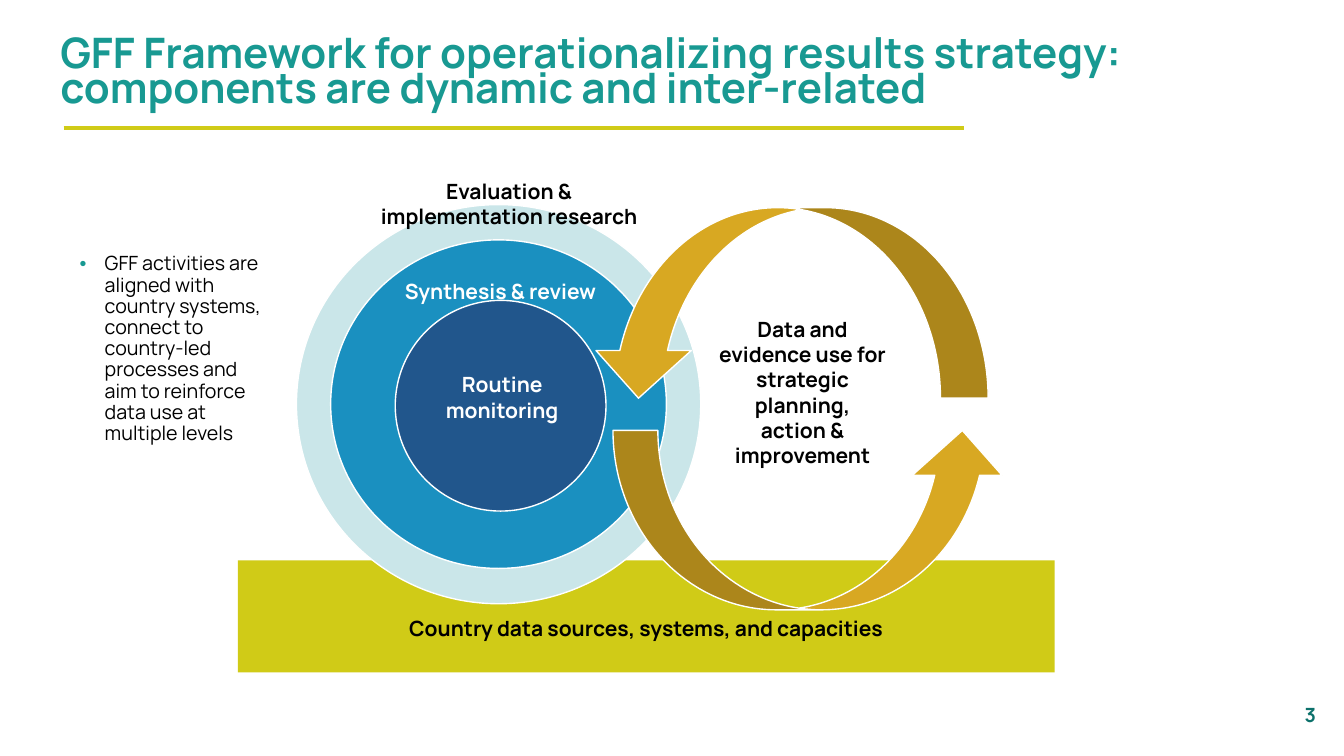
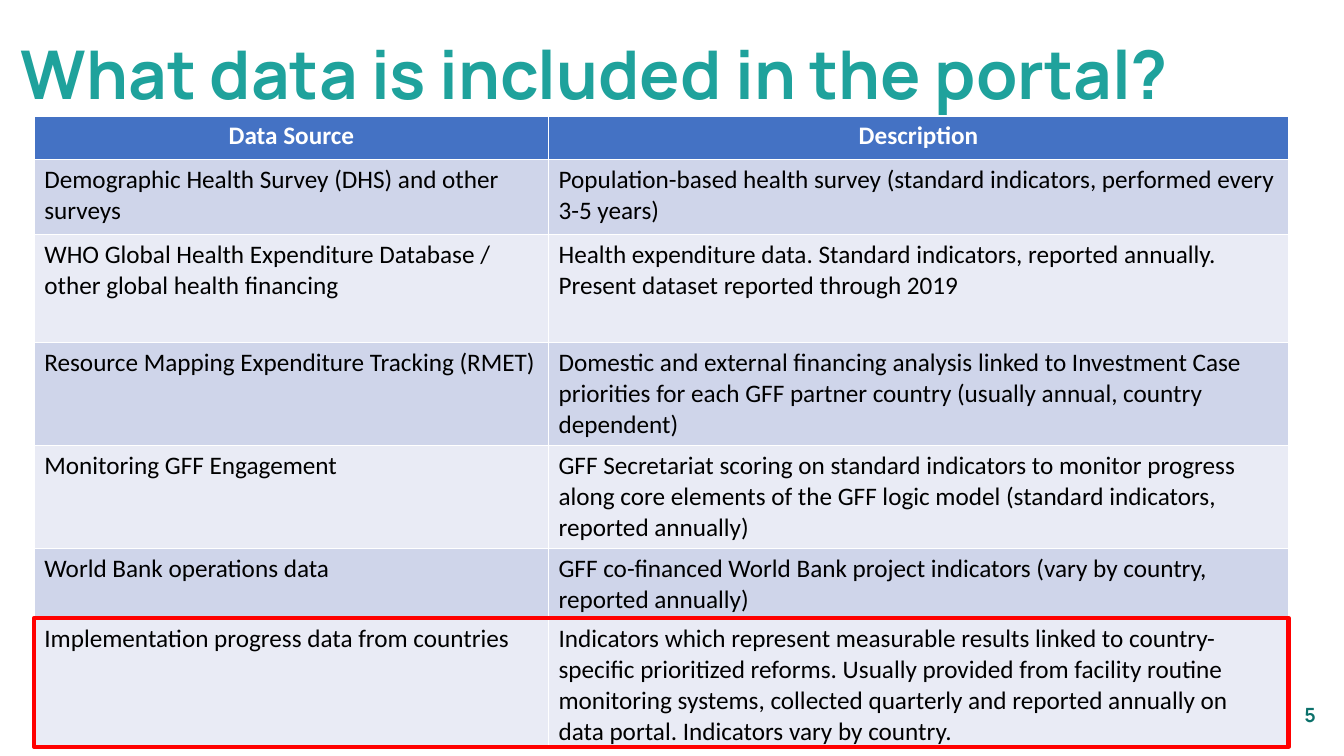
from lxml import etree
from pptx import Presentation
from pptx.dml.color import RGBColor
from pptx.enum.shapes import MSO_CONNECTOR, MSO_SHAPE
from pptx.enum.text import MSO_ANCHOR, PP_ALIGN
from pptx.oxml.ns import qn
from pptx.util import Inches, Pt

LEFT, MID, RIGHT = PP_ALIGN.LEFT, PP_ALIGN.CENTER, PP_ALIGN.RIGHT
TOP, CENTRE = MSO_ANCHOR.TOP, MSO_ANCHOR.MIDDLE
RECT, OVAL, ARROW = MSO_SHAPE.RECTANGLE, MSO_SHAPE.OVAL, MSO_SHAPE.CURVED_UP_ARROW

FONT, GRID_FONT = "Manrope", "Calibri"
COLORS = {
    "teal": "189992", "aqua": "1FA29C", "pine": "0C716B", "lime": "D0CB17",
    "pale": "CAE6E9", "blue": "1A90C0", "navy": "21568C", "gold": "D8A822",
    "head": "4472C4", "odd": "CFD5EA", "even": "E9EBF5",
    "red": "FF0000", "black": "000000", "white": "FFFFFF",
}

# Content: framework slide
FRAME_TITLE = ("GFF Framework for operationalizing results strategy: "
               "components are dynamic and inter-related")
NOTE = ("GFF activities are aligned with country systems, connect to "
        "country-led processes and aim to reinforce data use at multiple levels")
BASE = "Country data sources, systems, and capacities"
RINGS = [  # box, fill
    ((2.94, 2.03, 4.01, 3.96), "pale"),
    ((3.28, 2.38, 3.33, 3.26), "blue"),
    ((3.92, 2.98, 2.09, 2.09), "navy"),
]
LABELS = [  # box, lines, colour
    ((2.85, 1.72, 4.4, 0.61), ["Evaluation &", "implementation research"], "black"),
    ((3.71, 2.71, 2.51, 0.35), ["Synthesis & review"], "white"),
    ((3.99, 3.64, 1.98, 0.61), ["Routine monitoring"], "white"),
]
ARROWS = [  # box, rotation
    ((5.86, 2.06, 3.94, 1.89), 180),
    ((6.08, 4.27, 3.91, 1.78), 0),
]
USE = ["Data and", "evidence use for strategic planning,", "action & improvement"]

# Content: data slide
DATA_TITLE = "What data is included in the portal?"
WIDTHS = [5.1, 7.34]
HEIGHTS = [0.43, 0.75, 1.07, 1.02, 1.02, 0.7, 1.26]
ROWS = [
    ("Data Source", "Description"),
    ("Demographic Health Survey (DHS) and other surveys",
     "Population-based health survey (standard indicators, performed every 3-5 years)"),
    ("WHO Global Health Expenditure Database / other global health financing",
     "Health expenditure data. Standard indicators, reported annually. "
     "Present dataset reported through 2019"),
    ("Resource Mapping Expenditure Tracking (RMET)",
     "Domestic and external financing analysis linked to Investment Case priorities "
     "for each GFF partner country (usually annual, country dependent)"),
    ("Monitoring GFF Engagement",
     "GFF Secretariat scoring on standard indicators to monitor progress along core "
     "elements of the GFF logic model (standard indicators, reported annually)"),
    ("World Bank operations data",
     "GFF co-financed World Bank project indicators (vary by country, reported annually)"),
    ("Implementation progress data from countries",
     "Indicators which represent measurable results linked to country-specific "
     "prioritized reforms. Usually provided from facility routine monitoring systems, "
     "collected quarterly and reported annually on data portal. "
     "Indicators vary by country."),
]


def rgb(name):
    return RGBColor.from_string(COLORS[name])


def inches(box):
    return [Inches(n) for n in box]


def style(para, size, color, bold, align, font=FONT, space=1.0):
    para.alignment = align
    para.line_spacing = space
    for run in para.runs:
        run.font.name, run.font.size, run.font.bold = font, Pt(size), bold
        run.font.color.rgb = rgb(color)


def fill_text(frame, lines, size, color, bold=True, align=MID, anchor=TOP, space=1.0):
    frame.word_wrap = True
    frame.vertical_anchor = anchor
    frame.text = "\n".join(lines)
    for para in frame.paragraphs:
        style(para, size, color, bold, align, space=space)


def add_text(slide, box, lines, size, color, **look):
    frame = slide.shapes.add_textbox(*inches(box)).text_frame
    fill_text(frame, lines, size, color, **look)
    return frame


def add_shape(slide, kind, box, fill=None, line=None, width=1):
    shape = slide.shapes.add_shape(kind, *inches(box))
    shape.shadow.inherit = False
    for part, color in ((shape.fill, fill), (shape.line.fill, line)):
        if color:
            part.solid()
            part.fore_color.rgb = rgb(color)
        else:
            part.background()
    if line:
        shape.line.width = Pt(width)
    return shape


def add_bullet(para, color):
    props = para._p.get_or_add_pPr()
    props.set("marL", str(Inches(0.25)))
    props.set("indent", str(-Inches(0.25)))
    tint = etree.SubElement(props, qn("a:buClr"))
    etree.SubElement(tint, qn("a:srgbClr"), val=COLORS[color])
    etree.SubElement(props, qn("a:buFont"), typeface="Arial")
    etree.SubElement(props, qn("a:buChar"), char="•")


def new_slide(deck, number, title, box, size, color, space):
    slide = deck.slides.add_slide(deck.slide_layouts[6])
    add_text(slide, box, [title], size, color, align=LEFT, space=space)
    add_text(slide, (12.63, 6.89, 0.52, 0.4), [number], 14, "pine",
             align=RIGHT, anchor=CENTRE)
    return slide


def build_frame(deck):
    slide = new_slide(deck, "3", FRAME_TITLE, (0.5, 0.35, 12.83, 1.12), 30, "teal", 0.7)

    # Rule under the title
    rule = slide.shapes.add_connector(MSO_CONNECTOR.STRAIGHT,
                                      *inches((0.63, 1.27, 9.56, 1.27)))
    rule.line.color.rgb = rgb("lime")
    rule.line.width = Pt(3.25)
    etree.SubElement(rule._element.spPr, qn("a:effectLst"))

    # Side note
    note = add_text(slide, (0.69, 2.47, 2.08, 3.69), [NOTE], 14, "black",
                    bold=False, align=LEFT, space=0.9)
    add_bullet(note.paragraphs[0], "teal")

    # Base block, rings and their labels
    base = add_shape(slide, RECT, (2.36, 5.56, 8.1, 1.11), "lime").text_frame
    fill_text(base, [BASE], 15, "black")
    base.margin_top = Inches(0.55)
    for box, fill in RINGS:
        add_shape(slide, OVAL, box, fill, "white")
    for box, lines, color in LABELS:
        add_text(slide, box, lines, 15, color)

    # Cycle of data use
    for box, turn in ARROWS:
        add_shape(slide, ARROW, box, "gold", "white").rotation = turn
    use = add_text(slide, (6.97, 3.1, 1.98, 1.59), USE, 15, "black")
    use.margin_left = use.margin_right = Inches(0.07)
    use.margin_top = use.margin_bottom = Inches(0.04)


def build_data(deck):
    slide = new_slide(deck, "5", DATA_TITLE, (0.11, 0.36, 12.67, 1.12), 48, "aqua", 0.9)

    # Table of sources
    left, top, wide = 0.34, 1.15, sum(WIDTHS)
    grid = slide.shapes.add_table(len(ROWS), len(WIDTHS), *inches(
        (left, top, wide, sum(HEIGHTS)))).table
    for col, width in zip(grid.columns, WIDTHS):
        col.width = Inches(width)
    for r, (texts, height) in enumerate(zip(ROWS, HEIGHTS)):
        grid.rows[r].height = Inches(height)
        head = r == 0
        fill = "head" if head else ("even", "odd")[r % 2]
        for c, text in enumerate(texts):
            cell = grid.cell(r, c)
            cell.fill.solid()
            cell.fill.fore_color.rgb = rgb(fill)
            cell.text = text
            style(cell.text_frame.paragraphs[0], 18, "white" if head else "black",
                  head, MID if head else LEFT, GRID_FONT)

    # Frame around the last row
    add_shape(slide, RECT, (left, 6.13, wide, 1.28), line="red", width=3)


def main():
    deck = Presentation()
    deck.slide_width, deck.slide_height = Inches(13.33), Inches(7.5)
    build_frame(deck)
    build_data(deck)
    deck.save("out.pptx")


if __name__ == "__main__":
    main()
